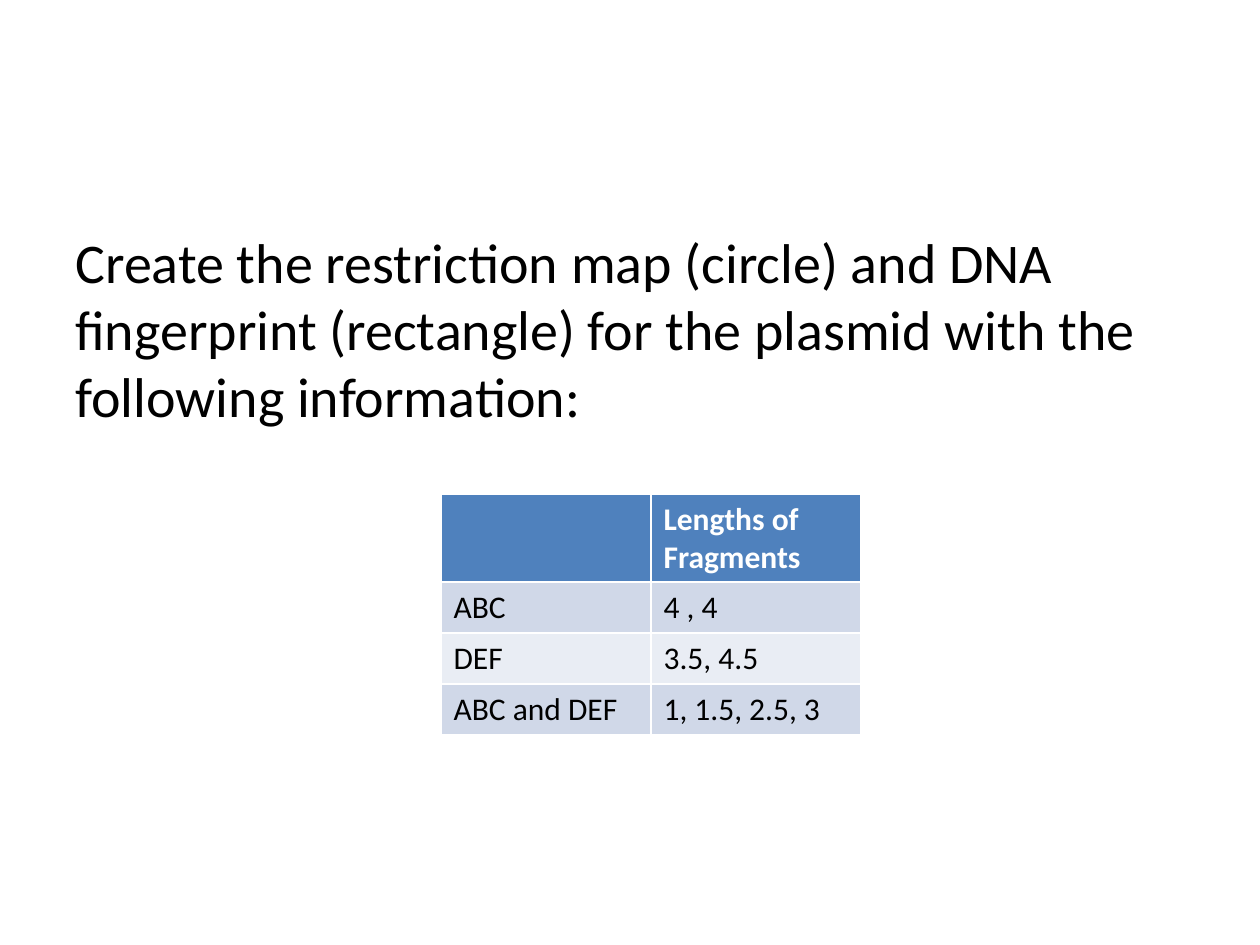
from dataclasses import dataclass

from pptx import Presentation
from pptx import util as u
from pptx.dml.color import RGBColor
from pptx.enum import text

PX = u.Inches(1) // 126


@dataclass(frozen=True)
class Theme:
    font: str = "Calibri"
    ink: str = "000000"
    header_ink: str = "FFFFFF"
    header_fill: str = "4F81BD"
    bands: tuple = ("D0D8E8", "E9EDF4")
    body_size: int = 32
    table_size: int = 18


THEME = Theme()
PROMPT = ("Create the restriction map (circle) and DNA fingerprint (rectangle) "
          "for the plasmid with the following information:")
FRAGMENTS = [
    ("", "Lengths of Fragments"),
    ("ABC", "4 , 4"),
    ("DEF", "3.5, 4.5"),
    ("ABC and DEF", "1, 1.5, 2.5, 3"),
]


def px(*lengths):
    return [u.Emu(n * PX) for n in lengths]


def apply(obj, values):
    for name, value in values.items():
        setattr(obj, name, value)


def write(p, words, size, color, bold=False):
    font = p.font
    if words:
        r = p.add_run()
        r.text = words
        font = r.font
    apply(font, {"name": THEME.font, "size": u.Pt(size), "bold": bold})
    font.color.rgb = RGBColor.from_string(color)


def add_prompt(slide, words, box):
    tf = slide.shapes.add_textbox(*px(*box)).text_frame
    apply(tf, {"word_wrap": True, "vertical_anchor": text.MSO_ANCHOR.TOP})
    p = tf.paragraphs[0]
    p.space_before = u.Pt(0.2 * THEME.body_size)
    write(p, words, THEME.body_size, THEME.ink)


def add_fragment_table(slide, rows, box):
    table = slide.shapes.add_table(len(rows), len(rows[0]), *px(*box)).table
    for i, row in enumerate(rows):
        header = i == 0
        fill = THEME.header_fill if header else THEME.bands[(i - 1) % 2]
        color = THEME.header_ink if header else THEME.ink
        for j, words in enumerate(row):
            cell = table.cell(i, j)
            cell.fill.solid()
            cell.fill.fore_color.rgb = RGBColor.from_string(fill)
            write(cell.text_frame.paragraphs[0], words,
                  THEME.table_size, color, header)


def main():
    prs = Presentation()
    apply(prs, dict(zip(("slide_width", "slide_height"), px(1260, 945))))
    slide = prs.slides.add_slide(prs.slide_layouts[6])
    add_prompt(slide, PROMPT, (63, 221, 1134, 624))
    add_fragment_table(slide, FRAGMENTS, (441, 494, 420, 204))
    prs.save("out.pptx")


if __name__ == "__main__":
    main()
